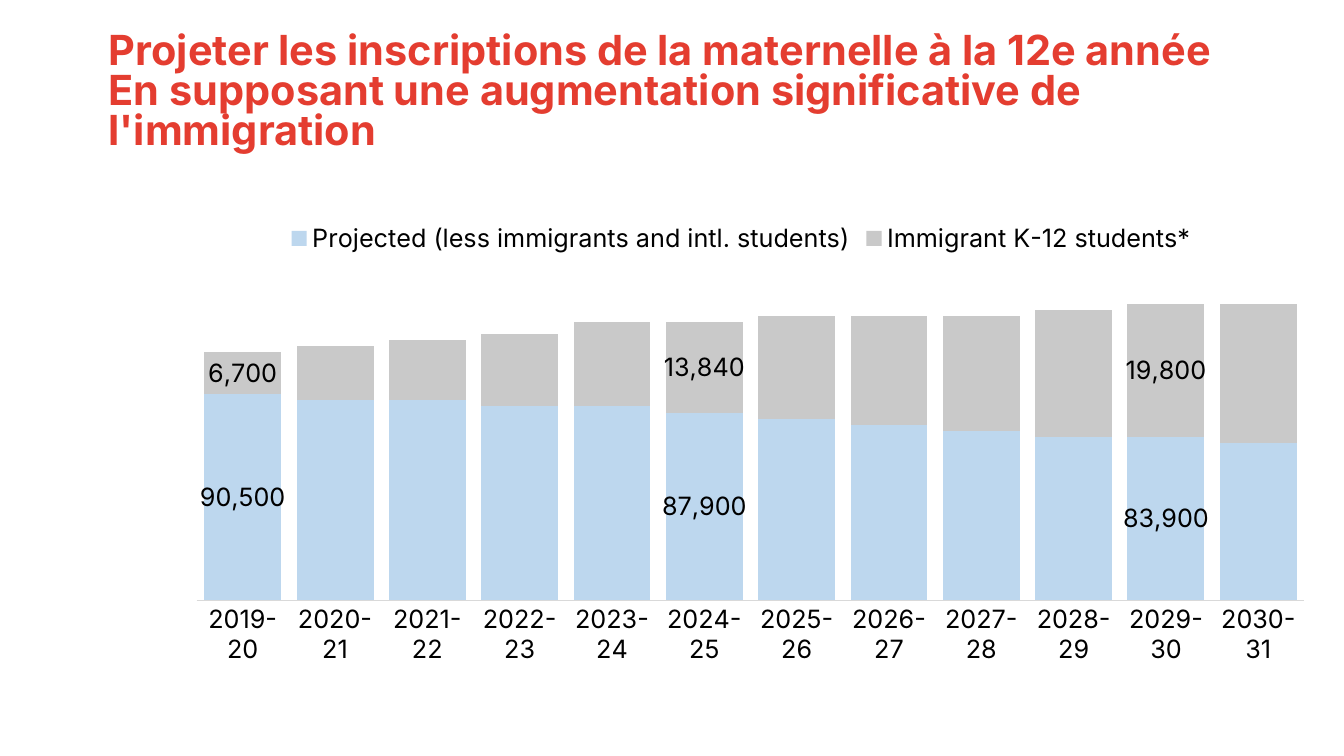
import pptx
import pptx.chart.data
import pptx.dml.color
import pptx.enum.chart
import pptx.oxml
import pptx.oxml.ns
import pptx.util
from pptx.util import Inches

# Content
TITLE = [
    "Projeter les inscriptions de la maternelle à la 12e année",
    "En supposant une augmentation significative de l'immigration",
]
YEARS = [f"{year}-{year - 1999}" for year in range(2019, 2031)]
# name, colour, values, labels by point
SERIES = [
    ("Projected (less immigrants and intl. students)", "BDD7EE",
     [100, 99, 99, 98, 98, 97, 96, 95, 94, 93, 93, 92],
     {0: "90,500", 5: "87,900", 10: "83,900"}),
    ("Immigrant K-12 students*", "C9C9C9",
     [7, 9, 10, 12, 14, 15, 17, 18, 19, 21, 22, 23],
     {0: "6,700", 5: "13,840", 10: "19,800"}),
]
PLOT_AREA = {"x": 0.04, "y": 0.098, "w": 0.936, "h": 0.657}


def color(value):
    return pptx.dml.color.RGBColor.from_string(value)


def style_font(font, size, value, bold=False):
    font.name = "Inter"
    font.size = pptx.util.Pt(size)
    font.bold = bold
    font.color.rgb = color(value)


def place_plot(chart):
    """Fix the inner plot area as fractions of the chart."""
    plot_area = chart.element.chart.plotArea
    for old in plot_area.findall(pptx.oxml.ns.qn("c:layout")):
        plot_area.remove(old)
    modes = "".join(f'<c:{key}Mode val="edge"/>' for key in "xy")
    sizes = "".join(f'<c:{key} val="{part}"/>' for key, part in PLOT_AREA.items())
    plot_area.insert(0, pptx.oxml.parse_xml(
        f'<c:layout {pptx.oxml.ns.nsdecls("c")}><c:manualLayout>'
        f'<c:layoutTarget val="inner"/>{modes}{sizes}</c:manualLayout></c:layout>'))


def add_title(page):
    box = page.shapes.add_textbox(Inches(0.98), Inches(0.29), Inches(12.13), Inches(1.3))
    frame = box.text_frame
    frame.word_wrap = True
    frame.text = "\n".join(TITLE)
    for para in frame.paragraphs:
        para.line_spacing = 0.8
        style_font(para.font, 29.6, "E43D30", bold=True)


def add_enrolment_chart(page):
    data = pptx.chart.data.CategoryChartData()
    data.categories = YEARS
    for name, _, values, _ in SERIES:
        data.add_series(name, values)
    chart = page.shapes.add_chart(
        pptx.enum.chart.XL_CHART_TYPE.COLUMN_STACKED,
        Inches(1.48), Inches(2.09), Inches(11.74), Inches(5.12), data).chart
    style_font(chart.font, 18, "000000")
    chart.has_title = False
    place_plot(chart)

    # Legend
    chart.has_legend = True
    chart.legend.position = pptx.enum.chart.XL_LEGEND_POSITION.TOP
    chart.legend.include_in_layout = False
    style_font(chart.legend.font, 18, "000000")

    # Axes
    axis = chart.category_axis
    axis.major_tick_mark = pptx.enum.chart.XL_TICK_MARK.NONE
    axis.format.line.color.rgb = color("D9D9D9")
    axis.format.line.width = pptx.util.Pt(0.75)
    style_font(axis.tick_labels.font, 18, "000000")
    chart.value_axis.visible = False
    chart.value_axis.has_major_gridlines = False
    chart.value_axis.minimum_scale = 66
    chart.value_axis.maximum_scale = 122

    # Columns and their labels
    plot = chart.plots[0]
    plot.gap_width = 20
    plot.overlap = 100
    plot.vary_by_categories = False
    for series, (_, fill, _, labels) in zip(plot.series, SERIES):
        series.format.fill.solid()
        series.format.fill.fore_color.rgb = color(fill)
        series.data_labels.show_value = False
        for index, text in labels.items():
            label = series.points[index].data_label
            label.text_frame.text = text
            label.text_frame.word_wrap = False
            style_font(label.text_frame.paragraphs[0].font, 18, "000000")
            label.position = pptx.enum.chart.XL_LABEL_POSITION.CENTER


def main():
    deck = pptx.Presentation()
    deck.slide_width, deck.slide_height = Inches(13.33), Inches(7.5)
    page = deck.slides.add_slide(deck.slide_layouts[6])
    add_title(page)
    add_enrolment_chart(page)
    deck.save("out.pptx")


if __name__ == "__main__":
    main()
